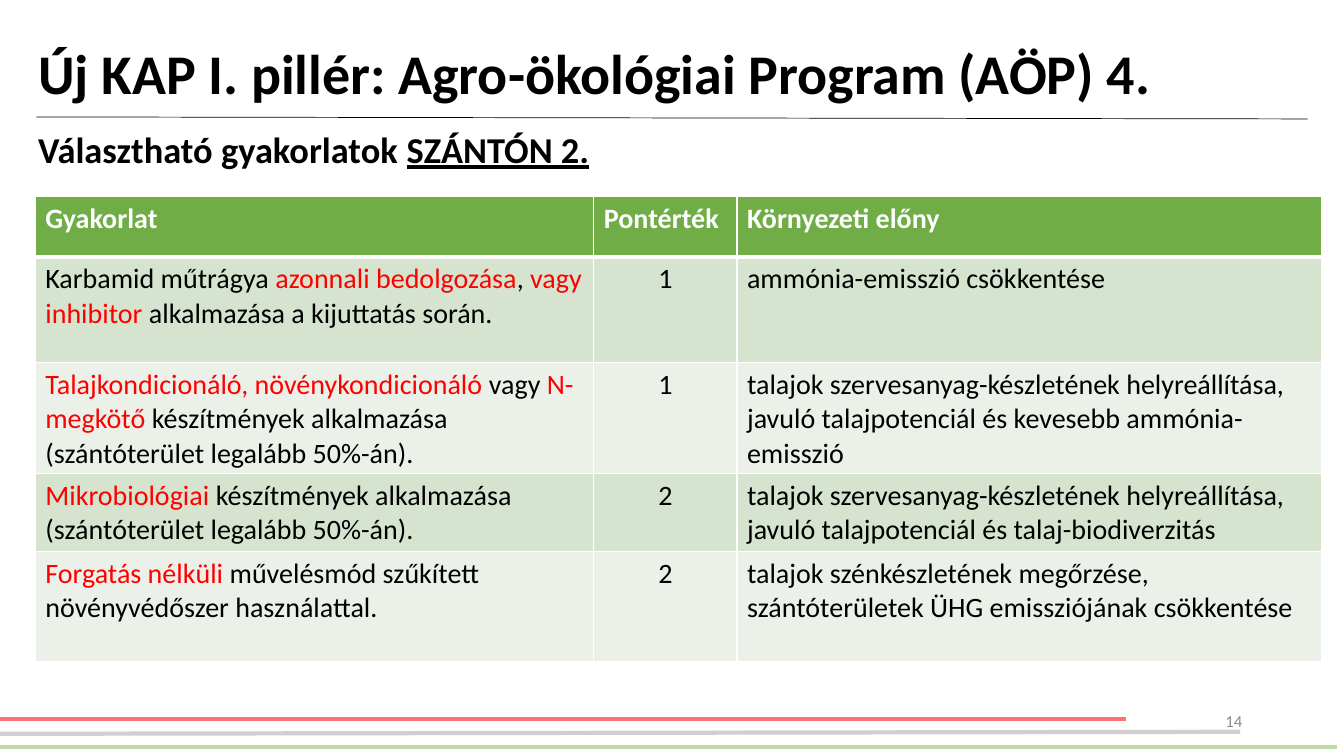
from lxml import etree
from pptx import Presentation
from pptx.dml.color import RGBColor
from pptx.enum.shapes import MSO_CONNECTOR
from pptx.enum.text import MSO_ANCHOR, MSO_AUTO_SIZE, PP_ALIGN
from pptx.oxml import parse_xml
from pptx.oxml.ns import nsdecls, qn
from pptx.util import Inches, Pt

STRAIGHT = MSO_CONNECTOR.STRAIGHT
MIDDLE = MSO_ANCHOR.MIDDLE
LEFT, CENTER, RIGHT = PP_ALIGN.LEFT, PP_ALIGN.CENTER, PP_ALIGN.RIGHT
NO_AUTOFIT, GROW = MSO_AUTO_SIZE.NONE, MSO_AUTO_SIZE.SHAPE_TO_FIT_TEXT
BLACK, WHITE, RED, GREY = "000000", "FFFFFF", "FF0000", "8C8C8C"
HEADER_GREEN, BAND_GREENS = "70AD47", ("D5E3CF", "EBF1E9")


def rgb(value):
    return RGBColor.from_string(value)


def write(paragraph, pieces, size, bold=False, align=LEFT):
    """Add (text, colour, underline) pieces to the paragraph as runs."""
    paragraph.alignment = align
    for text, color, underline in pieces:
        run = paragraph.add_run()
        run.text = text
        font_format = {"name": "Calibri", "size": Pt(size), "bold": bold, "underline": underline}
        for attribute, value in font_format.items():
            setattr(run.font, attribute, value)
        run.font.color.rgb = rgb(color)


prs = Presentation()
prs.slide_width, prs.slide_height = Inches(13.33), Inches(7.5)
slide = prs.slides.add_slide(prs.slide_layouts[5])

# Footer stripes and the rule under the title
rules = [
    (0, 7.13, 11.17, 7.13, "F97376", 3),
    (0, 7.41, 13.26, 7.41, "BEDCAA", 3),
    (0, 7.28, 12.3, 7.26, "D0CECE", 3),
    (0.36, 1.16, 12.97, 1.18, BLACK, 0.5),
]
for x1, y1, x2, y2, color, width in rules:
    rule = slide.shapes.add_connector(STRAIGHT, Inches(x1), Inches(y1), Inches(x2), Inches(y2))
    rule.line.color.rgb = rgb(color)
    rule.line.width = Pt(width)
    etree.SubElement(rule._element.spPr, qn("a:effectLst"))

# Title
title = slide.shapes.title
title_place = {"left": 0.17, "top": 0.03, "width": 12.88, "height": 1.45}
for attribute, value in title_place.items():
    setattr(title, attribute, Inches(value))
title_frame = title.text_frame
title_frame.auto_size = NO_AUTOFIT
title_frame.vertical_anchor = MIDDLE
title_frame.margin_left = Inches(0.21)
title_frame.paragraphs[0].line_spacing = 0.9
write(title_frame.paragraphs[0],
      [("Új KAP I. pillér: Agro-ökológiai Program (AÖP) 4.", BLACK, False)], 40, bold=True)

# Subtitle
subtitle = slide.shapes.add_textbox(Inches(0.28), Inches(1.21), Inches(5.84), Inches(0.54))
subtitle.text_frame.word_wrap = True
subtitle.text_frame.auto_size = GROW
write(subtitle.text_frame.paragraphs[0],
      [("Választható gyakorlatok ", BLACK, False), ("SZÁNTÓN 2.", BLACK, True)], 26, bold=True)

# Slide number
page_number = slide.shapes.add_textbox(Inches(9.42), Inches(6.95), Inches(3), Inches(0.4))
page_number.text_frame.word_wrap = True
page_number.text_frame.vertical_anchor = MIDDLE
write(page_number.text_frame.paragraphs[0], [("14", GREY, False)], 12, align=RIGHT)

# Practices: text pieces alternate between plain and highlighted, starting plain
headings = [["Gyakorlat"], ["Pontérték"], ["Környezeti előny"]]
practices = [
    [["Karbamid műtrágya ", "azonnali bedolgozása", ", ", "vagy inhibitor",
      " alkalmazása a kijuttatás során."],
     ["1"], ["ammónia-emisszió csökkentése"]],
    [["", "Talajkondicionáló, növénykondicionáló ", "vagy ", "N-megkötő",
      " készítmények alkalmazása (szántóterület legalább 50%-án)."],
     ["1"], ["talajok szervesanyag-készletének helyreállítása, javuló talajpotenciál "
             "és kevesebb ammónia-emisszió"]],
    [["", "Mikrobiológiai ", "készítmények alkalmazása (szántóterület legalább 50%-án)."],
     ["2"], ["talajok szervesanyag-készletének helyreállítása, javuló talajpotenciál "
             "és talaj-biodiverzitás"]],
    [["", "Forgatás nélküli ", "művelésmód szűkített növényvédőszer használattal."],
     ["2"], ["talajok szénkészletének megőrzése, szántóterületek ÜHG emissziójának csökkentése"]],
]
column_widths = [5.54, 1.42, 5.8]
row_heights = [0.6, 1.05, 0.79, 0.77, 1.09]
table = slide.shapes.add_table(len(row_heights), len(column_widths), Inches(0.35), Inches(1.95),
                               Inches(sum(column_widths)), Inches(sum(row_heights))).table
for column, width in zip(table.columns, column_widths):
    column.width = Inches(width)
for row, height in zip(table.rows, row_heights):
    row.height = Inches(height)

for r, row_texts in enumerate([headings] + practices):
    is_header = r == 0
    for c, texts in enumerate(row_texts):
        cell = table.cell(r, c)
        properties = cell._tc.get_or_add_tcPr()
        for side in "LRTB":
            thick = (is_header and side == "B") or (r == 1 and side == "T")
            properties.append(parse_xml(
                f'<a:ln{side} {nsdecls("a")} w="{Pt(3 if thick else 1)}"><a:solidFill>'
                f'<a:srgbClr val="{WHITE}"/></a:solidFill></a:ln{side}>'))
        cell.fill.solid()
        cell.fill.fore_color.rgb = rgb(HEADER_GREEN if is_header else BAND_GREENS[(r - 1) % 2])
        plain = WHITE if is_header else BLACK
        pieces = [(text, RED if i % 2 else plain, False) for i, text in enumerate(texts) if text]
        write(cell.text_frame.paragraphs[0], pieces, 20, bold=is_header,
              align=CENTER if c == 1 and not is_header else LEFT)

prs.save("out.pptx")
